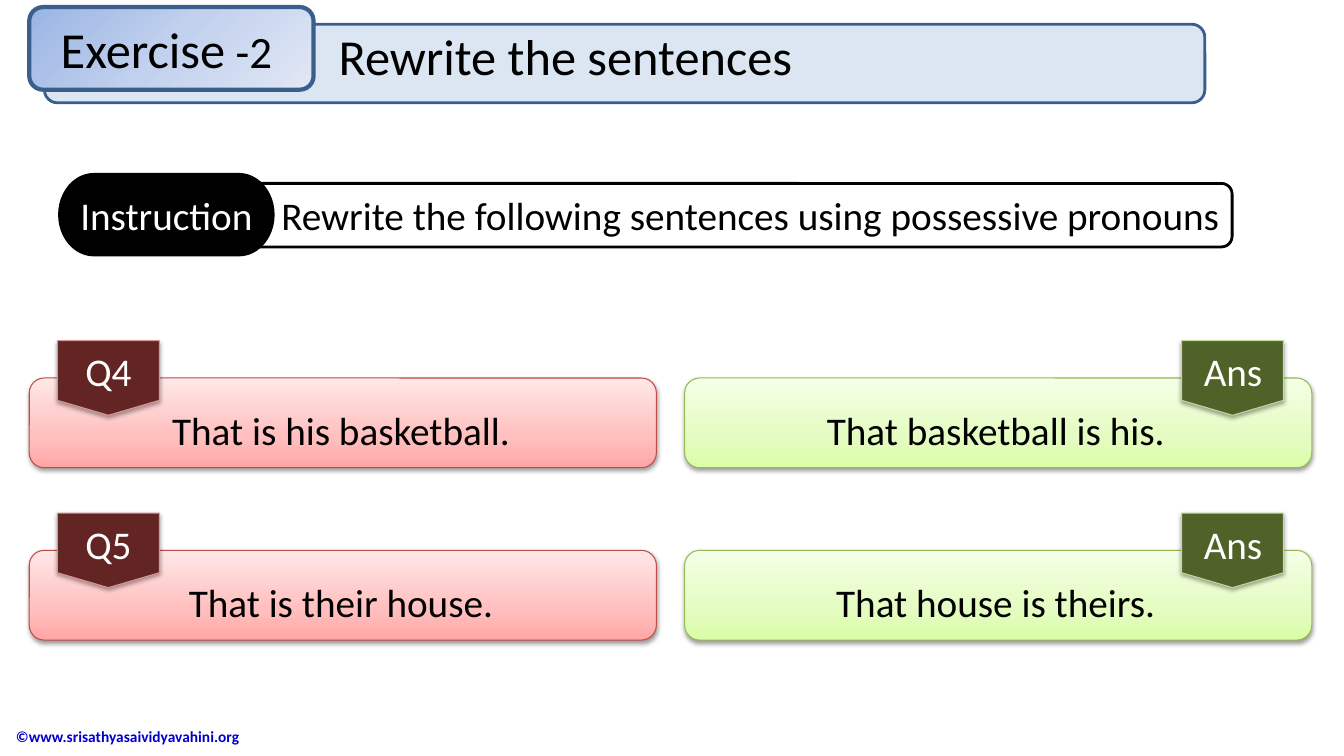
from lxml import etree
from pptx import Presentation
from pptx.dml.color import RGBColor
from pptx.enum.shapes import MSO_SHAPE as Kind
from pptx.enum.text import MSO_ANCHOR as Anchor, PP_ALIGN as Align
from pptx.oxml import parse_xml
from pptx.oxml.ns import nsdecls, qn
from pptx.util import Pt

TITLE = [("Exercise", 36), (" -2 ", 32)]
TOPIC = "Rewrite the sentences"
LABEL = "Instruction"
TASK = "Rewrite the following sentences using possessive pronouns"
SITE = "©www.srisathyasaividyavahini.org"
ROWS = [
    ("Q4", "That is his basketball. ", "That basketball is his."),
    ("Q5", "That is their house. ", "That house is theirs."),
]
ROSE = [(0, "FFA6A5"), (35, "FFC0BF"), (100, "FFE7E7")]
LIME = [(0, "DAFDA7"), (35, "E4FCC2"), (100, "F5FFE7")]
BLUE = [(0, "9AB5E4"), (50, "C2D1ED"), (100, "E1E8F5")]
ASK = dict(card=29, text=44, tag=57, word=74, wide=67,
           fill=ROSE, edge="BF4C48", dark="632523", rim="D99694")
REPLY = dict(card=679, text=689, tag=1172, word=1181, wide=84,
             fill=LIME, edge="98B955", dark="4F6228", rim="C3D69B")
TOP, STEP = 338, 171


def px(n):
    return n * 9144


def rgb(code):
    return RGBColor.from_string(code)


def shade(alpha, blur, dist):
    """Build an effect list with one shadow falling straight down."""
    return parse_xml(
        f'<a:effectLst {nsdecls("a")}><a:outerShdw blurRad="{Pt(blur)}" '
        f'dist="{Pt(dist)}" dir="5400000" rotWithShape="0"><a:srgbClr val="000000">'
        f'<a:alpha val="{alpha * 1000}"/></a:srgbClr></a:outerShdw></a:effectLst>')


def blend(fill, stops, angle):
    """Fill with a linear gradient of any number of stops."""
    fill.gradient()
    fill.gradient_angle = angle
    ramp = fill._fill._gradFill.find(qn("a:gsLst"))
    for old in list(ramp):
        ramp.remove(old)
    for place, code in stops:
        stop = etree.SubElement(ramp, qn("a:gs"), pos=str(place * 1000))
        etree.SubElement(stop, qn("a:srgbClr"), val=code)


def write(shape, runs, color="000000", align=Align.CENTER, anchor=Anchor.TOP,
          wrap=True, bold=False, glow=False):
    """Put one paragraph of (text, size) runs into a shape."""
    frame = shape.text_frame
    frame.word_wrap = wrap
    frame.vertical_anchor = anchor
    para = frame.paragraphs[0]
    para.alignment = align
    for text, size in runs:
        run = para.add_run()
        run.text = text
        font = run.font
        font.size, font.bold, font.name = Pt(size), bold, "Calibri"
        font.color.rgb = rgb(color)
        if glow:
            tint = run._r.rPr.find(qn("a:solidFill"))
            tint.addnext(shade(40, 4, 3))


def block(slide, kind, box, fill, edge, width, angle=90, drop=None):
    """Add a filled, outlined preset shape."""
    shape = slide.shapes.add_shape(kind, *map(px, box))
    shape.shadow.inherit = False
    if isinstance(fill, str):
        shape.fill.solid()
        shape.fill.fore_color.rgb = rgb(fill)
    else:
        blend(shape.fill, fill, angle)
    shape.line.color.rgb = rgb(edge)
    shape.line.width = Pt(width)
    if drop:
        props = shape._element.spPr
        props.replace(props.find(qn("a:effectLst")), shade(*drop))
    return shape


def label(slide, box, runs, **style):
    """Add a text box."""
    write(slide.shapes.add_textbox(*map(px, box)), runs, **style)


def card(slide, y, side, tag, text):
    """Add a sentence card with its tag."""
    block(slide, Kind.FLOWCHART_ALTERNATE_PROCESS, (side["card"], y + 37, 622, 89),
          side["fill"], side["edge"], 0.75, drop=(38, 3.1, 1.6))
    label(slide, (side["text"], y + 60, 597, 57), [(text, 28)], glow=True)
    block(slide, Kind.FLOWCHART_OFFPAGE_CONNECTOR, (side["tag"], y, 101, 74),
          side["dark"], side["rim"], 0.75, drop=(35, 3.1, 1.8))
    label(slide, (side["word"], y + 2, side["wide"], 57), [(tag, 28)], color="FFFFFF")


def main():
    """Build and save the slide."""
    deck = Presentation()
    deck.slide_width, deck.slide_height = px(1333), px(750)
    slide = deck.slides.add_slide(deck.slide_layouts[6])

    label(slide, (6, 710, 353, 41), [(SITE, 11)], color="0000CC",
          align=Align.LEFT, anchor=Anchor.MIDDLE, bold=True)

    block(slide, Kind.FLOWCHART_ALTERNATE_PROCESS, (44, 24, 1151, 78),
          "DCE6F2", "3A5F8C", 2)
    block(slide, Kind.ROUNDED_RECTANGLE, (29, 7, 282, 82), BLUE, "3A5F8C", 3, angle=315)
    label(slide, (29, 12, 282, 71), TITLE, anchor=Anchor.MIDDLE, glow=True)
    label(slide, (326, 20, 900, 71), [(TOPIC, 36)], align=Align.LEFT, glow=True)

    bar = block(slide, Kind.FLOWCHART_ALTERNATE_PROCESS, (107, 182, 1115, 63),
                "FFFFFF", "000000", 2)
    write(bar, [(TASK, 28)], align=Align.RIGHT, anchor=Anchor.MIDDLE)
    pill = block(slide, Kind.FLOWCHART_TERMINATOR, (59, 173, 212, 80),
                 "000000", "000000", 2)
    write(pill, [(LABEL, 28)], color="FFFFFF", anchor=Anchor.MIDDLE, wrap=False)

    for i, (tag, ask, reply) in enumerate(ROWS):
        y = TOP + i * STEP
        card(slide, y, ASK, tag, ask)
        card(slide, y, REPLY, "Ans", reply)
    deck.save("out.pptx")


if __name__ == "__main__":
    main()
